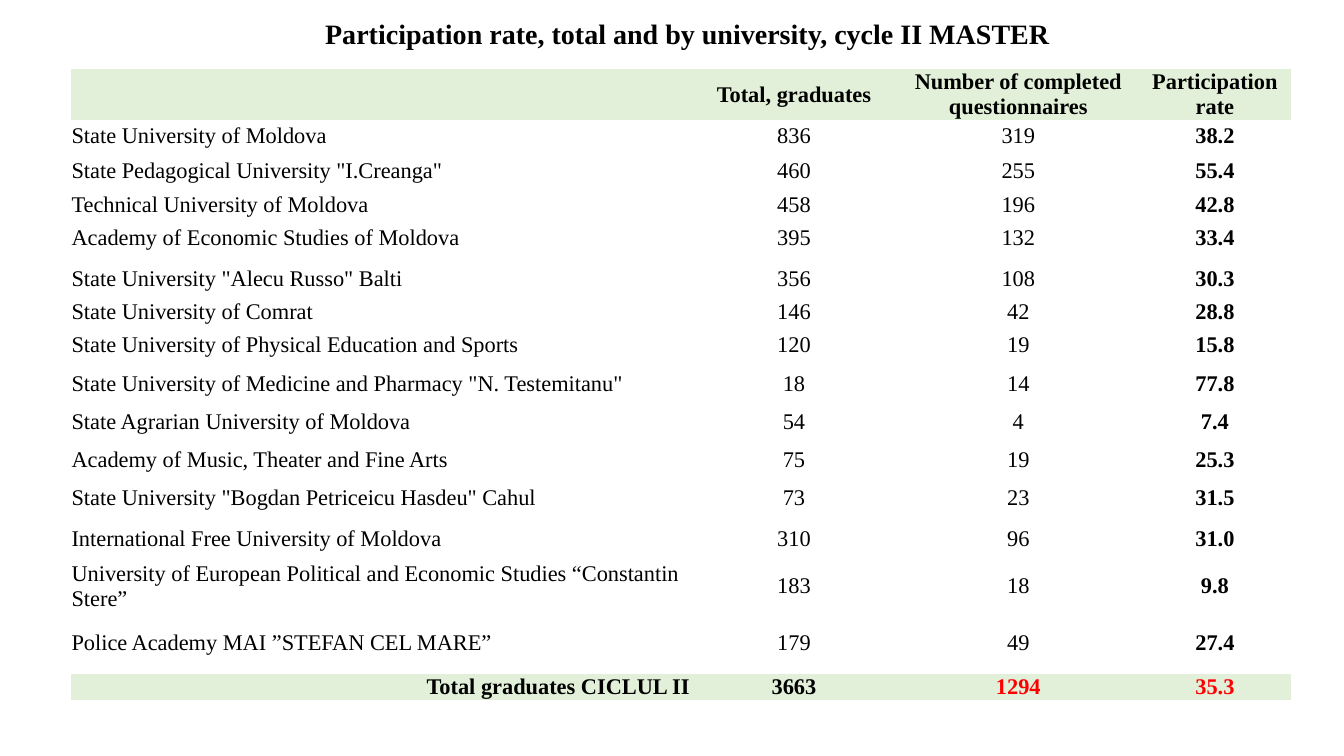
"""Build a slide with the participation rate of master graduates by university."""
from pptx import Presentation
from pptx.dml.color import RGBColor
from pptx.enum.text import MSO_ANCHOR as Anchor, PP_ALIGN as Align
from pptx.util import Inches, Pt

COLORS = {"text": "000000", "band": "E2F0D9", "accent": "FF0000"}
FONT = "Times New Roman"
COLUMN_WIDTHS = [6.15, 2.05, 2.4, 1.5]
ROW_HEIGHTS = [0.51, 0.3, 0.4, 0.27, 0.4, 0.4, 0.27, 0.38, 0.39,
               0.36, 0.39, 0.38, 0.43, 0.47, 0.62, 0.26]
PARTICIPATION = [
    ("", "Total, graduates", "Number of completed questionnaires", "Participation rate"),
    ("State University of Moldova", "836", "319", "38.2"),
    ('State Pedagogical University "I.Creanga"', "460", "255", "55.4"),
    ("Technical University of Moldova", "458", "196", "42.8"),
    ("Academy of Economic Studies of Moldova", "395", "132", "33.4"),
    ('State University "Alecu Russo" Balti', "356", "108", "30.3"),
    ("State University of Comrat", "146", "42", "28.8"),
    ("State University of Physical Education and Sports", "120", "19", "15.8"),
    ('State University of Medicine and Pharmacy "N. Testemitanu"', "18", "14", "77.8"),
    ("State Agrarian University of Moldova", "54", "4", "7.4"),
    ("Academy of Music, Theater and Fine Arts", "75", "19", "25.3"),
    ('State University "Bogdan Petriceicu Hasdeu" Cahul', "73", "23", "31.5"),
    ("International Free University of Moldova", "310", "96", "31.0"),
    ("University of European Political and Economic Studies “Constantin Stere”",
     "183", "18", "9.8"),
    ("Police Academy MAI ”STEFAN CEL MARE”", "179", "49", "27.4"),
    ("Total graduates CICLUL II", "3663", "1294", "35.3"),
]


def add_text(paragraph, text, size, bold, color, align):
    paragraph.alignment = align
    run = paragraph.add_run()
    run.text = text
    run.font.name = FONT
    run.font.size = Pt(size)
    run.font.bold = bold
    run.font.color.rgb = RGBColor.from_string(COLORS[color])


deck = Presentation()
deck.slide_width, deck.slide_height = Inches(13.33), Inches(7.5)
slide = deck.slides.add_slide(deck.slide_layouts[6])

rates = slide.shapes.add_table(
    len(ROW_HEIGHTS), len(COLUMN_WIDTHS), Inches(0.7), Inches(0.68),
    Inches(sum(COLUMN_WIDTHS)), Inches(sum(ROW_HEIGHTS))).table
rates.first_row = rates.horz_banding = False
rates._tbl.tblPr[0].text = "{2D5ABB26-0587-4C30-8999-92F81FD0307C}"
for column, width in zip(rates.columns, COLUMN_WIDTHS):
    column.width = Inches(width)

total_row, rate_column = len(ROW_HEIGHTS) - 1, len(COLUMN_WIDTHS) - 1
for r, entries in enumerate(PARTICIPATION):
    rates.rows[r].height = Inches(ROW_HEIGHTS[r])
    banded = r in (0, total_row)
    for c, entry in enumerate(entries):
        cell = rates.cell(r, c)
        cell.vertical_anchor = Anchor.MIDDLE
        cell.margin_left = cell.margin_right = cell.margin_top = Inches(0.01)
        cell.margin_bottom = 0
        if banded:
            cell.fill.solid()
            cell.fill.fore_color.rgb = RGBColor.from_string(COLORS["band"])
        else:
            cell.fill.background()
        if not entry:
            continue
        name_align = Align.RIGHT if r == total_row else Align.LEFT
        add_text(cell.text_frame.paragraphs[0], entry, 16,
                 banded or c == rate_column,
                 "accent" if r == total_row and c >= 2 else "text",
                 Align.CENTER if c else name_align)
rates.cell(total_row, rate_column).vertical_anchor = Anchor.BOTTOM

heading = slide.shapes.add_textbox(
    Inches(1.07), Inches(0.13), Inches(11.5), Inches(0.44)).text_frame
heading.word_wrap = True
heading.vertical_anchor = Anchor.MIDDLE
heading.paragraphs[0].line_spacing = 0.9
add_text(heading.paragraphs[0],
         "Participation rate, total and by university, cycle II MASTER",
         20, True, "text", Align.CENTER)

deck.save("out.pptx")
